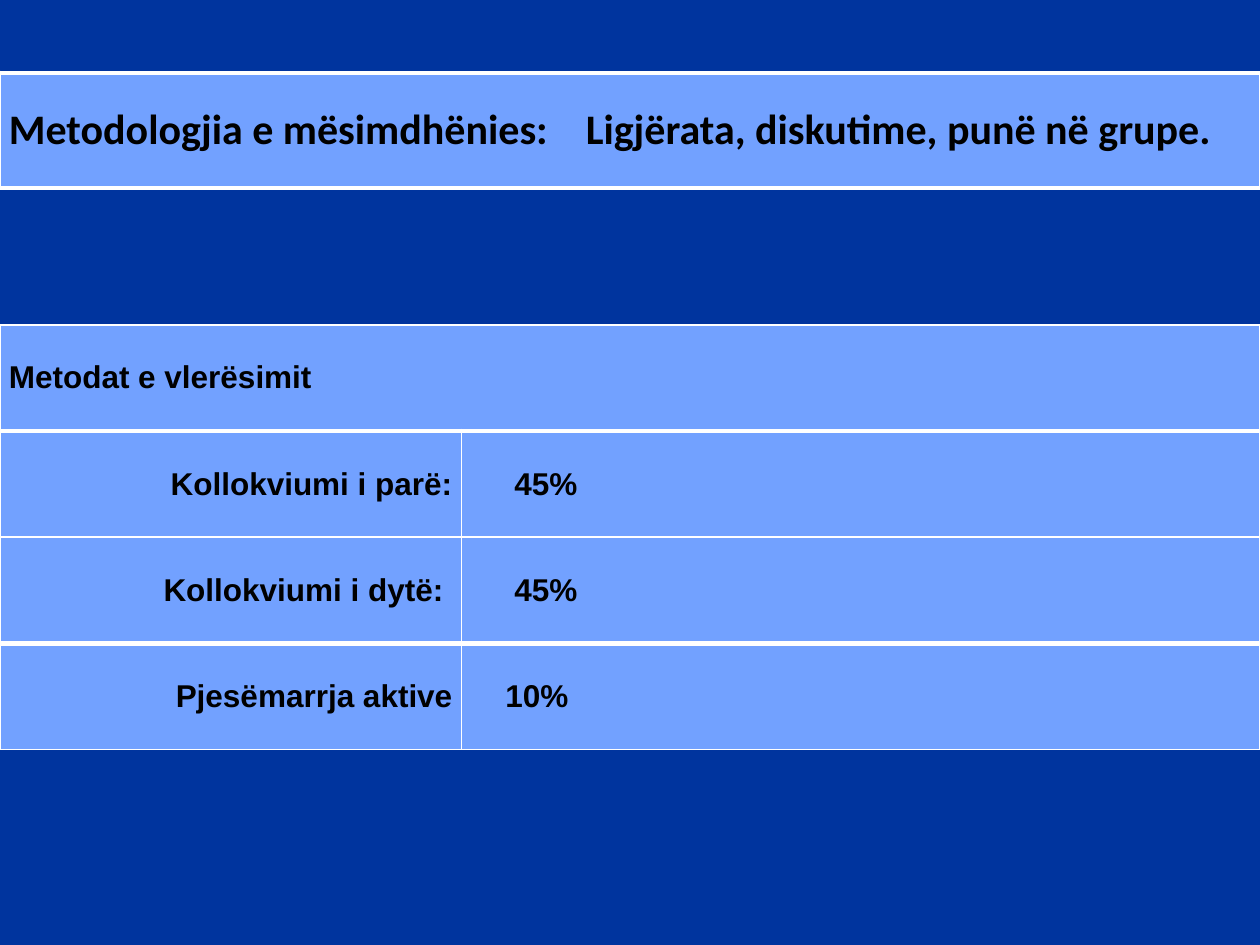
from dataclasses import dataclass

from lxml import etree
from pptx import Presentation
from pptx import util as u
from pptx.dml.color import RGBColor
from pptx.enum import text
from pptx.oxml.ns import qn


@dataclass(frozen=True)
class Theme:
    back: str = "00349E"
    fill: str = "72A1FF"
    line: str = "FFFFFF"
    ink: str = "000000"
    head: tuple = ("Calibri", 24)
    body: tuple = ("Arial", 18)
    thin: int = 1
    thick: int = 3
    pad: float = 0.18


class Page:
    def __init__(self, deck, theme):
        self.theme = theme
        self.slide = deck.slides.add_slide(deck.slide_layouts[6])
        back = self.slide.background.fill
        back.solid()
        back.fore_color.rgb = RGBColor.from_string(theme.back)

    def table(self, top, cols, rows, high):
        """Add a plain table that spans the slide, with equal rows."""
        frame = self.slide.shapes.add_table(
            rows, len(cols), 0, u.Cm(top), u.Cm(sum(cols)), u.Cm(high * rows))
        grid = frame.table
        grid.first_row = grid.horz_banding = False
        for col, wide in zip(grid.columns, cols):
            col.width = u.Cm(wide)
        for row in grid.rows:
            row.height = u.Cm(high)
        return grid

    def edges(self, cell, top, base):
        """Draw the four cell borders; top and base are widths in points."""
        thin = self.theme.thin
        props = cell._tc.get_or_add_tcPr()
        for side, wide in {"L": thin, "R": thin, "T": top, "B": base}.items():
            line = etree.SubElement(props, qn(f"a:ln{side}"), w=str(u.Pt(wide)))
            paint = etree.SubElement(line, qn("a:solidFill"))
            etree.SubElement(paint, qn("a:srgbClr"), val=self.theme.line)

    def cell(self, cell, words, font, top, base, left=0, right=0, align="LEFT"):
        """Style a cell and fill it; left and right are extra indents in cm."""
        pad = self.theme.pad
        self.edges(cell, top, base)
        cell.fill.solid()
        cell.fill.fore_color.rgb = RGBColor.from_string(self.theme.fill)
        form = {"margin_left": u.Cm(pad + left), "margin_right": u.Cm(pad + right),
                "margin_top": 0, "margin_bottom": 0,
                "vertical_anchor": text.MSO_ANCHOR.MIDDLE}
        for key, val in form.items():
            setattr(cell, key, val)
        para = cell.text_frame.paragraphs[0]
        para.alignment = text.PP_ALIGN[align]
        if not words:
            return para
        run = para.add_run()
        run.text = words
        for key, val in {"name": font[0], "size": u.Pt(font[1]), "bold": True}.items():
            setattr(run.font, key, val)
        run.font.color.rgb = RGBColor.from_string(self.theme.ink)
        return para

    def tab(self, para, at):
        """Set one left tab stop, in cm from the text edge."""
        stops = etree.SubElement(para._p.get_or_add_pPr(), qn("a:tabLst"))
        etree.SubElement(stops, qn("a:tab"), pos=str(u.Cm(at)), algn="l")


def main():
    deck = Presentation()
    deck.slide_width, deck.slide_height = u.Cm(25.4), u.Cm(19.05)
    theme = Theme()
    page = Page(deck, theme)
    thin, thick = theme.thin, theme.thick

    # Teaching method banner
    band = page.table(1.47, [25.4], 1, 2.32)
    para = page.cell(band.cell(0, 0),
                     "Metodologjia e mësimdhënies:\tLigjërata, diskutime, punë në grupe.",
                     theme.head, thick, thick)
    page.tab(para, 11.63)

    # Grading table: label, label indent, share, share indent
    marks = [("Kollokviumi i parë:", 0, "45%", 0.89),
             ("Kollokviumi i dytë:", 0.18, "45%", 0.89),
             ("Pjesëmarrja aktive", 0, "10%", 0.71)]
    grid = page.table(6.55, [9.3, 16.1], len(marks) + 1, 2.14)
    lines = [thin, thick, thin, thick, thin]

    # Heading row across both columns
    grid.cell(0, 0).merge(grid.cell(0, 1))
    for col, words in enumerate(["Metodat e vlerësimit", ""]):
        page.cell(grid.cell(0, col), words, theme.body, *lines[:2])

    # Shares of the grade
    for row, (name, back, share, dent) in enumerate(marks, 1):
        rule = lines[row:row + 2]
        page.cell(grid.cell(row, 0), name, theme.body, *rule, right=back, align="RIGHT")
        page.cell(grid.cell(row, 1), share, theme.body, *rule, left=dent)

    deck.save("out.pptx")


if __name__ == "__main__":
    main()
